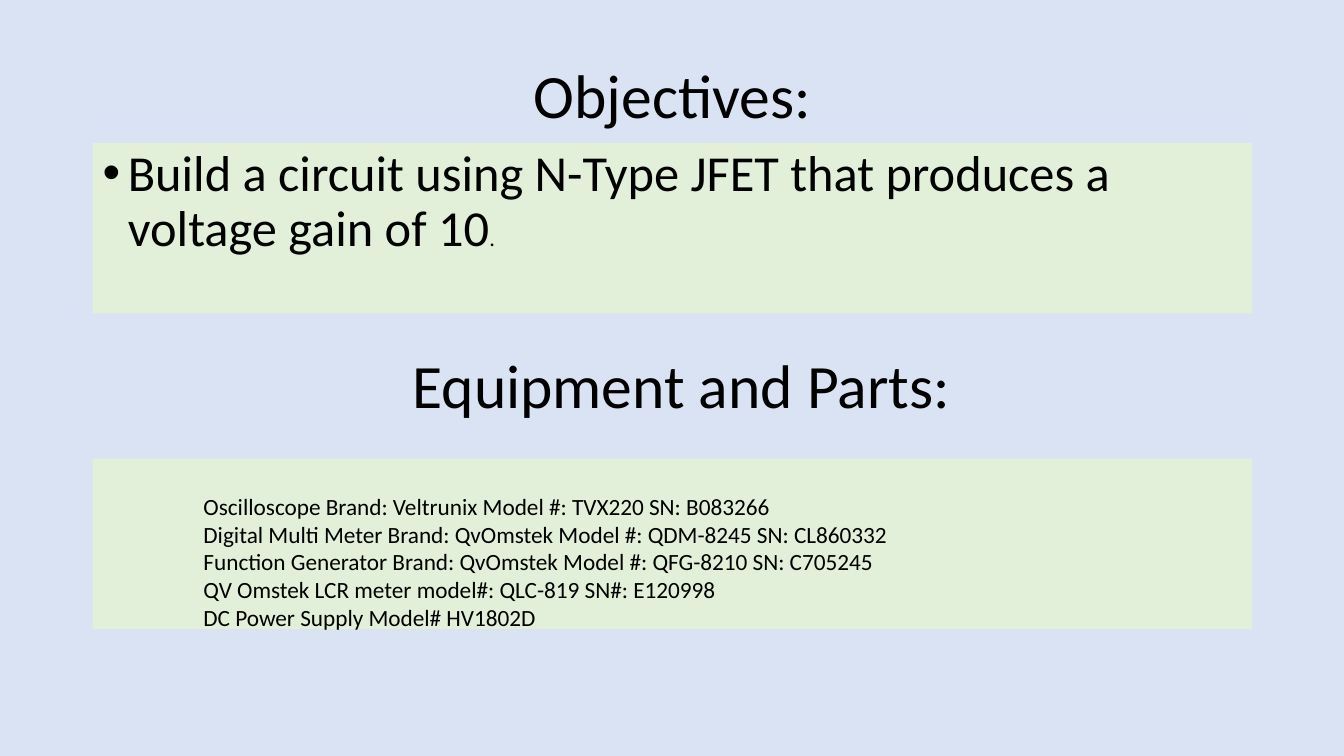
from lxml import etree
from pptx import Presentation
from pptx.dml.color import RGBColor
from pptx.enum.shapes import MSO_SHAPE
from pptx.enum.text import MSO_ANCHOR, MSO_AUTO_SIZE, PP_ALIGN
from pptx.oxml.ns import qn
from pptx.util import Inches, Pt

RECTANGLE = MSO_SHAPE.RECTANGLE
TOP, MIDDLE = MSO_ANCHOR.TOP, MSO_ANCHOR.MIDDLE
LEFT, CENTER = PP_ALIGN.LEFT, PP_ALIGN.CENTER
NO_AUTOFIT = MSO_AUTO_SIZE.NONE
TITLE_ONLY = 5

MARGIN, CONTENT_WIDTH = 0.92, 11.5
HEADING_HEIGHT, PANEL_HEIGHT = 1.45, 1.69

EQUIPMENT = [
    "Oscilloscope Brand: Veltrunix Model #: TVX220 SN: B083266",
    "Digital Multi Meter Brand: QvOmstek Model #: QDM-8245 SN: CL860332",
    "Function Generator Brand: QvOmstek Model #: QFG-8210 SN: C705245",
    "QV Omstek LCR meter model#: QLC-819 SN#: E120998",
    "DC Power Supply Model# HV1802D",
]


def color(hex_value):
    return RGBColor.from_string(hex_value)


def set_attributes(target, values):
    for name, value in values.items():
        setattr(target, name, value)


class SlideBuilder:
    font_name = "Calibri"
    text_color = "000000"
    panel_color = "E2F0D9"
    background_color = "DAE3F3"

    def __init__(self, presentation):
        self.slide = presentation.slides.add_slide(
            presentation.slide_layouts[TITLE_ONLY])
        background = self.slide.background.fill
        background.solid()
        background.fore_color.rgb = color(self.background_color)

    def paragraph(self, paragraph, runs, **formats):
        """Fill a paragraph from (text, point size) pairs."""
        set_attributes(paragraph, formats)
        for text, size in runs:
            run = paragraph.add_run()
            run.text = text
            set_attributes(run.font, {"name": self.font_name, "size": Pt(size)})
            run.font.color.rgb = color(self.text_color)

    def heading(self, shape, text, left, top):
        set_attributes(shape, {
            "left": Inches(left), "top": Inches(top),
            "width": Inches(CONTENT_WIDTH), "height": Inches(HEADING_HEIGHT)})
        frame = shape.text_frame
        set_attributes(frame, {"word_wrap": True, "auto_size": NO_AUTOFIT,
                               "vertical_anchor": MIDDLE})
        self.paragraph(frame.paragraphs[0], [(text, 44)],
                       alignment=CENTER, line_spacing=0.9)

    def title(self, text, left, top):
        self.heading(self.slide.shapes.title, text, left, top)

    def subheading(self, text, left, top):
        self.heading(self.slide.shapes.add_textbox(0, 0, 0, 0), text, left, top)

    def panel(self, top, lines, indent, hanging=0, bullet=None,
              top_inset=0.05, **formats):
        """Draw a filled box; each line is a list of (text, size) pairs."""
        shape = self.slide.shapes.add_shape(
            RECTANGLE, Inches(MARGIN), Inches(top),
            Inches(CONTENT_WIDTH), Inches(PANEL_HEIGHT))
        shape.shadow.inherit = False
        shape.fill.solid()
        shape.fill.fore_color.rgb = color(self.panel_color)
        shape.line.fill.background()
        frame = shape.text_frame
        set_attributes(frame, {"word_wrap": True, "auto_size": NO_AUTOFIT,
                               "vertical_anchor": TOP,
                               "margin_top": Inches(top_inset)})
        for index, runs in enumerate(lines):
            paragraph = frame.add_paragraph() if index else frame.paragraphs[0]
            self.paragraph(paragraph, runs, alignment=LEFT, **formats)
            properties = paragraph._p.get_or_add_pPr()
            properties.set("marL", str(Inches(indent)))
            properties.set("indent", str(Inches(-hanging)))
            if bullet:
                etree.SubElement(properties, qn("a:buFont")).set("typeface", "Arial")
                etree.SubElement(properties, qn("a:buChar")).set("char", bullet)


def main():
    presentation = Presentation()
    set_attributes(presentation, {"slide_width": Inches(13.33),
                                  "slide_height": Inches(7.5)})
    builder = SlideBuilder(presentation)
    builder.title("Objectives:", MARGIN, 0.25)
    objective = "Build a circuit using N-Type JFET that produces a voltage gain of 10"
    builder.panel(1.42, [[(objective, 36), (".", 16)]], indent=0.25,
                  hanging=0.25, bullet="•", line_spacing=0.9)
    builder.subheading("Equipment and Parts:", 1.01, 3.13)
    builder.panel(4.55, [[(item, 16.6)] for item in EQUIPMENT], indent=1,
                  top_inset=0.33)
    presentation.save("out.pptx")


if __name__ == "__main__":
    main()
